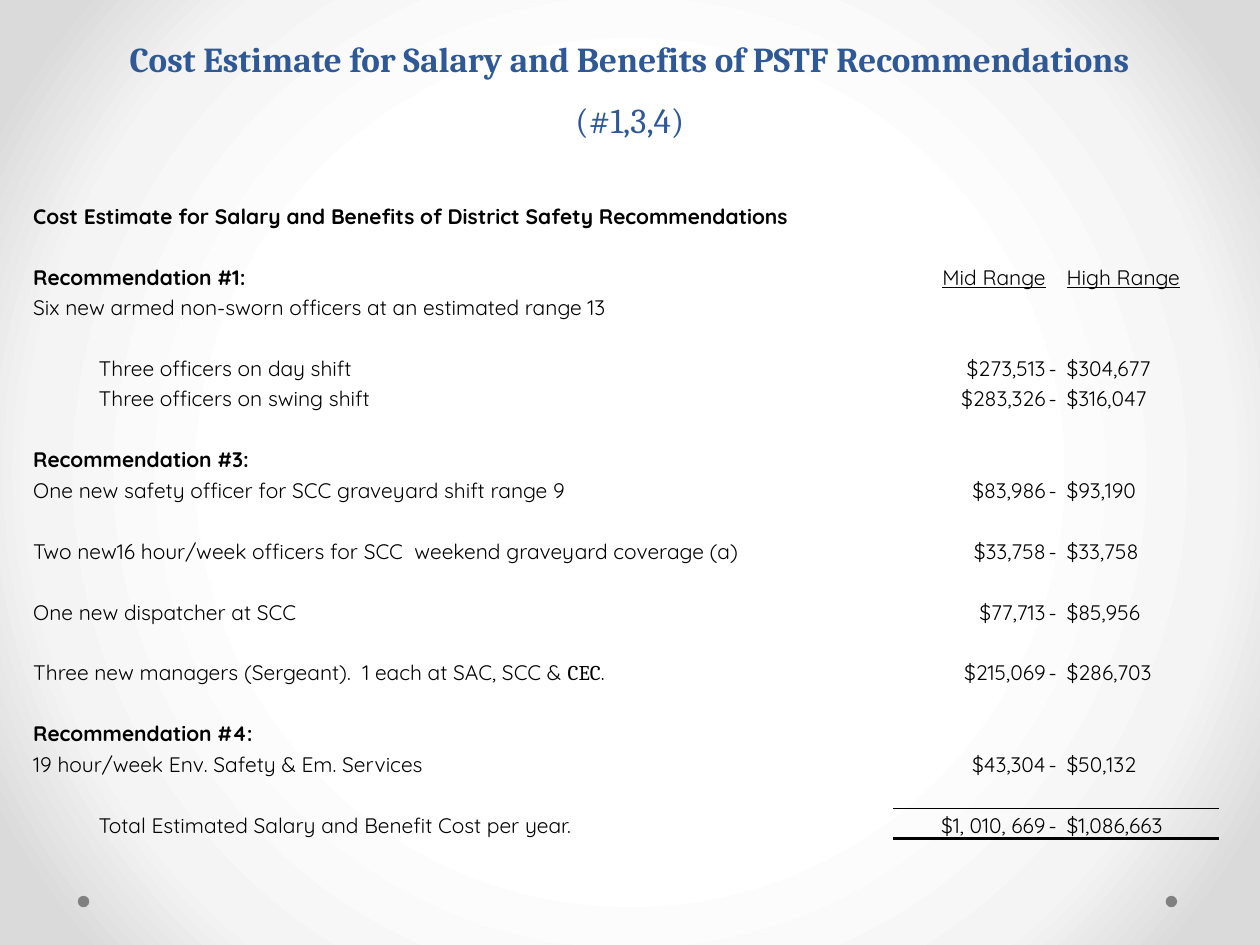
from dataclasses import dataclass

from lxml import etree
from pptx import Presentation
from pptx.dml.color import RGBColor
from pptx.enum import shapes, text
from pptx.oxml import parse_xml
from pptx.oxml.ns import nsdecls, qn
from pptx.util import Cm, Length, Pt


@dataclass(frozen=True)
class Theme:
    heading_font: str = "Cambria"
    body_font: str = "Quicksand"
    heading: str = "2F5897"
    ink: str = "000000"
    dot: str = "808080"
    backdrop: tuple = ((50, "FFFFFF"), (76, "F4F4F4"), (92, "DADADA"))
    heading_size: Length = Pt(20)
    heading_spacing: Length = Pt(35)
    body_size: Length = Pt(12)
    thin: Length = Pt(0.5)
    thick: Length = Pt(2)


@dataclass(frozen=True)
class CostLine:
    label: str = ""
    mid: str = ""
    high: str = ""
    indented: bool = False
    bold: bool = False
    span: int = 2
    header: bool = False
    serif_word: str = ""


THEME = Theme()
GAP = CostLine()
COST_LINES = [
    CostLine("Cost Estimate for Salary and Benefits of District Safety Recommendations", bold=True, span=3),
    GAP,
    CostLine("Recommendation #1:", "Mid Range", "High Range", bold=True, header=True),
    CostLine("Six new armed non-sworn officers at an estimated range 13"),
    GAP,
    CostLine("Three officers on day shift", "$273,513", "$304,677", indented=True),
    CostLine("Three officers on swing shift", "$283,326", "$316,047", indented=True),
    GAP,
    CostLine("Recommendation #3:", bold=True),
    CostLine("One new safety officer for SCC graveyard shift range 9", "$83,986", "$93,190"),
    GAP,
    CostLine("Two new16 hour/week officers for SCC  weekend graveyard coverage (a)", "$33,758", "$33,758"),
    GAP,
    CostLine("One new dispatcher at SCC", "$77,713", "$85,956"),
    GAP,
    CostLine("Three new managers (Sergeant).  1 each at SAC, SCC & CEC.", "$215,069", "$286,703", serif_word="CEC"),
    GAP,
    CostLine("Recommendation #4:", bold=True),
    CostLine("19 hour/week Env. Safety & Em. Services", "$43,304", "$50,132"),
    GAP,
    CostLine("Total Estimated Salary and Benefit Cost per year.", "$1, 010, 669", "$1,086,663", indented=True),
]
COLUMN_WIDTHS = (1.32, 16.05, 3.1, 0.36, 3.1)
AMOUNT_COLUMNS = (2, 3, 4)
NO_STYLE = "{2D5ABB26-0587-4C30-8999-92F81FD0307C}"


def paint_backdrop(slide) -> None:
    stops = "".join(
        f'<a:gs pos="{pos * 1000}"><a:srgbClr val="{color}"/></a:gs>' for pos, color in THEME.backdrop
    )
    slide.background.fill.solid()
    solid = slide._element.find(".//" + qn("p:bgPr")).find(qn("a:solidFill"))
    gradient = parse_xml(
        f'<a:gradFill rotWithShape="1" {nsdecls("a")}><a:gsLst>{stops}</a:gsLst><a:path path="circle">'
        '<a:fillToRect l="50000" t="50000" r="50000" b="50000"/></a:path></a:gradFill>'
    )
    solid.getparent().replace(solid, gradient)


def draw_dot(slide, left: float) -> None:
    dot = slide.shapes.add_shape(shapes.MSO_SHAPE.OVAL, Cm(left), Cm(18.06), Cm(0.23), Cm(0.23))
    dot.shadow.inherit = False
    dot.fill.solid()
    dot.fill.fore_color.rgb = RGBColor.from_string(THEME.dot)
    dot.line.fill.background()


def style_run(run, font: str, size: Length, color: str, bold: bool = False) -> None:
    run.font.name = font
    run.font.size = size
    run.font.bold = bold
    run.font.color.rgb = RGBColor.from_string(color)


def write_title(slide) -> None:
    title = slide.shapes.title
    title.left, title.top, title.width, title.height = Cm(1.27), Cm(0.43), Cm(22.86), Cm(2.54)
    frame = title.text_frame
    frame.auto_size = text.MSO_AUTO_SIZE.NONE
    frame.word_wrap = True
    frame.vertical_anchor = text.MSO_ANCHOR.BOTTOM
    frame.text = "Cost Estimate for Salary and Benefits of PSTF Recommendations"
    heading = frame.paragraphs[0]
    heading.alignment = text.PP_ALIGN.CENTER
    heading.line_spacing = THEME.heading_spacing
    heading.add_run().text = " (#1,3,4)"
    for run, bold in zip(heading.runs, (True, False)):
        style_run(run, THEME.heading_font, THEME.heading_size, THEME.heading, bold)


def prepare_cell(cell) -> None:
    cell.fill.background()
    cell.vertical_anchor = text.MSO_ANCHOR.BOTTOM
    cell.margin_left = cell.margin_top = cell.margin_right = Cm(0.03)
    cell.margin_bottom = 0


def write_cell(cell, words: str, bold: bool = False, underline: bool = False,
               serif_word: str = "", right: bool = False) -> None:
    paragraph = cell.text_frame.paragraphs[0]
    if not words:
        end = etree.SubElement(paragraph._p, qn("a:endParaRPr"))
        end.set("sz", str(int(THEME.body_size.pt * 100)))
        return
    paragraph.alignment = text.PP_ALIGN.RIGHT if right else text.PP_ALIGN.LEFT
    for part in words.partition(serif_word) if serif_word else (words,):
        run = paragraph.add_run()
        run.text = part
        font = THEME.heading_font if part == serif_word else THEME.body_font
        style_run(run, font, THEME.body_size, THEME.ink, bold)
        run.font.underline = underline


def rule_cell(cell, side: str, width: Length) -> None:
    border = parse_xml(
        f'<a:{side} w="{int(width)}" {nsdecls("a")}><a:solidFill><a:srgbClr val="{THEME.ink}"/>'
        f'</a:solidFill></a:{side}>'
    )
    cell._tc.get_or_add_tcPr().insert(0, border)


def draw_costs(slide) -> None:
    frame = slide.shapes.add_table(
        len(COST_LINES), len(COLUMN_WIDTHS), Cm(0.64), Cm(4.01), Cm(sum(COLUMN_WIDTHS)), Cm(12.9)
    )
    costs = frame.table
    costs.first_row = costs.horz_banding = False
    costs._tbl.tblPr.find(qn("a:tableStyleId")).text = NO_STYLE
    for column, width in zip(costs.columns, COLUMN_WIDTHS):
        column.width = Cm(width)
    for row, line in enumerate(COST_LINES):
        dash = "-" if line.mid and not line.header else ""
        labels = ("", line.label) if line.indented else (line.label, "")
        for column, words in enumerate((*labels, line.mid, dash, line.high)):
            cell = costs.cell(row, column)
            prepare_cell(cell)
            is_label = column < AMOUNT_COLUMNS[0]
            write_cell(cell, words, line.bold and is_label, line.header and not is_label,
                       line.serif_word if is_label else "", column == AMOUNT_COLUMNS[0])
        if line.label and not line.indented:
            costs.cell(row, 0).merge(costs.cell(row, line.span - 1))
    total = len(COST_LINES) - 1
    for column in AMOUNT_COLUMNS:
        rule_cell(costs.cell(total - 1, column), "lnB", THEME.thin)
        rule_cell(costs.cell(total, column), "lnB", THEME.thick)
        rule_cell(costs.cell(total, column), "lnT", THEME.thin)


def main() -> None:
    deck = Presentation()
    deck.slide_width, deck.slide_height = Cm(25.4), Cm(19.05)
    slide = deck.slides.add_slide(deck.slide_layouts[5])
    paint_backdrop(slide)
    for left in (23.5, 1.57):
        draw_dot(slide, left)
    draw_costs(slide)
    write_title(slide)
    deck.save("out.pptx")


if __name__ == "__main__":
    main()
